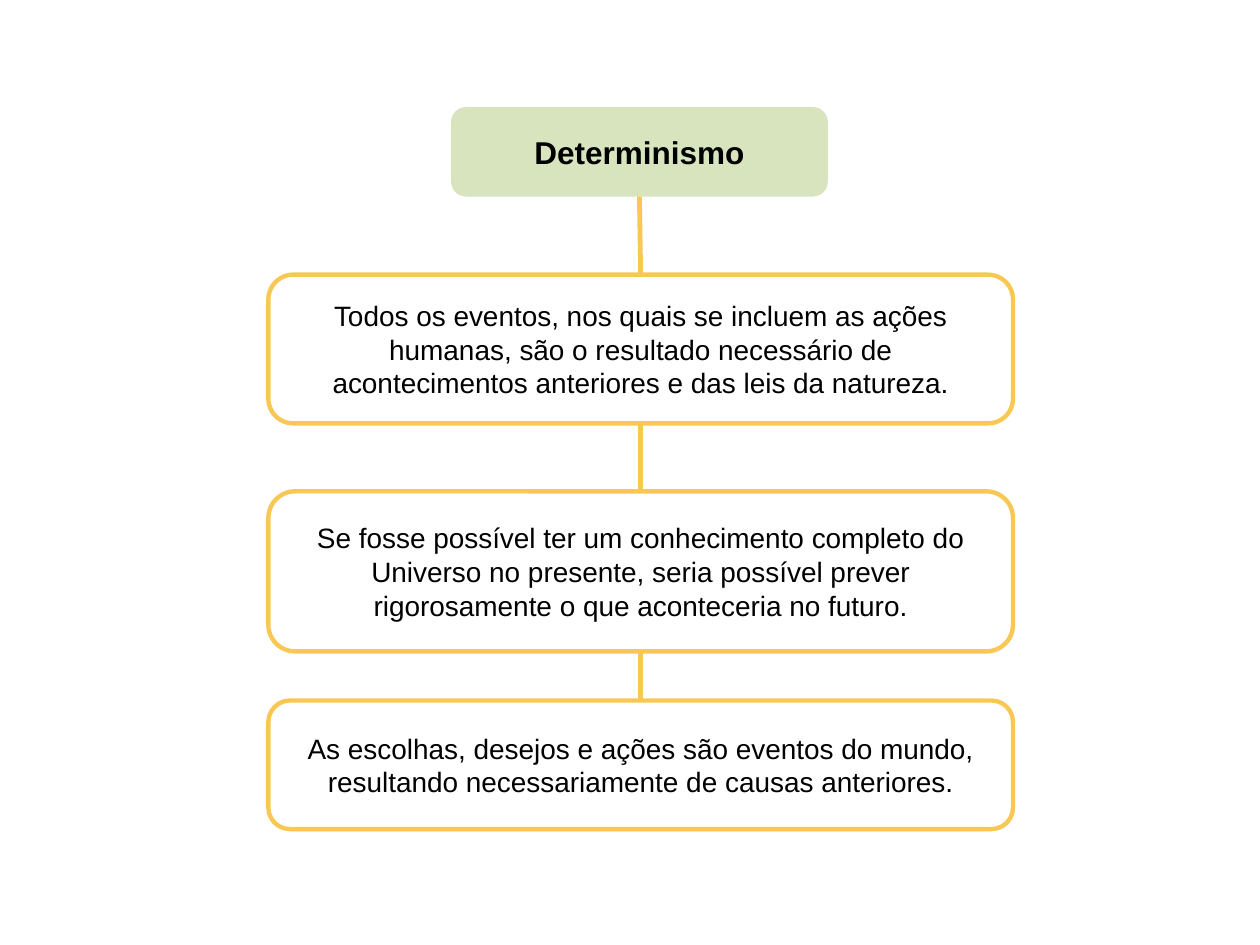
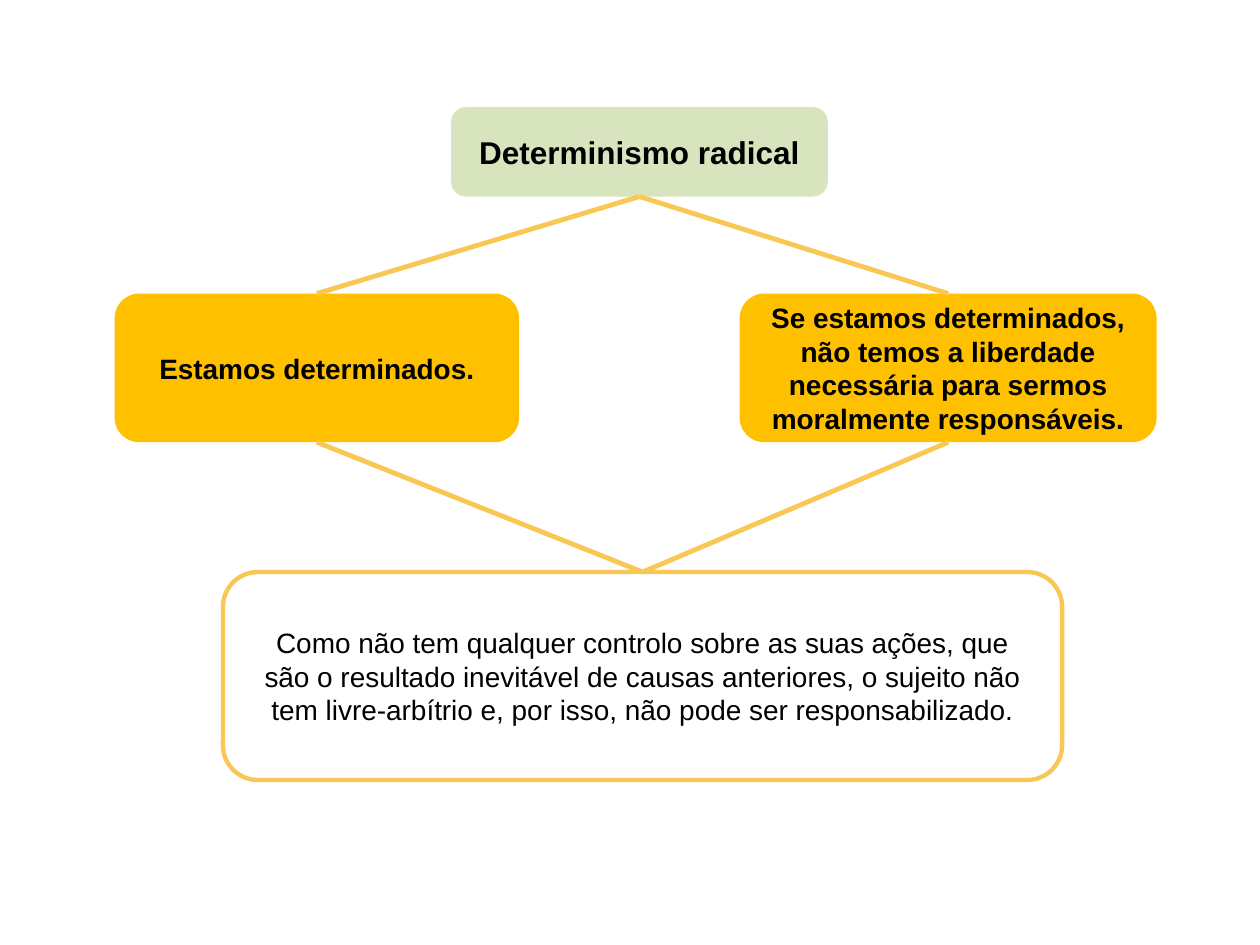
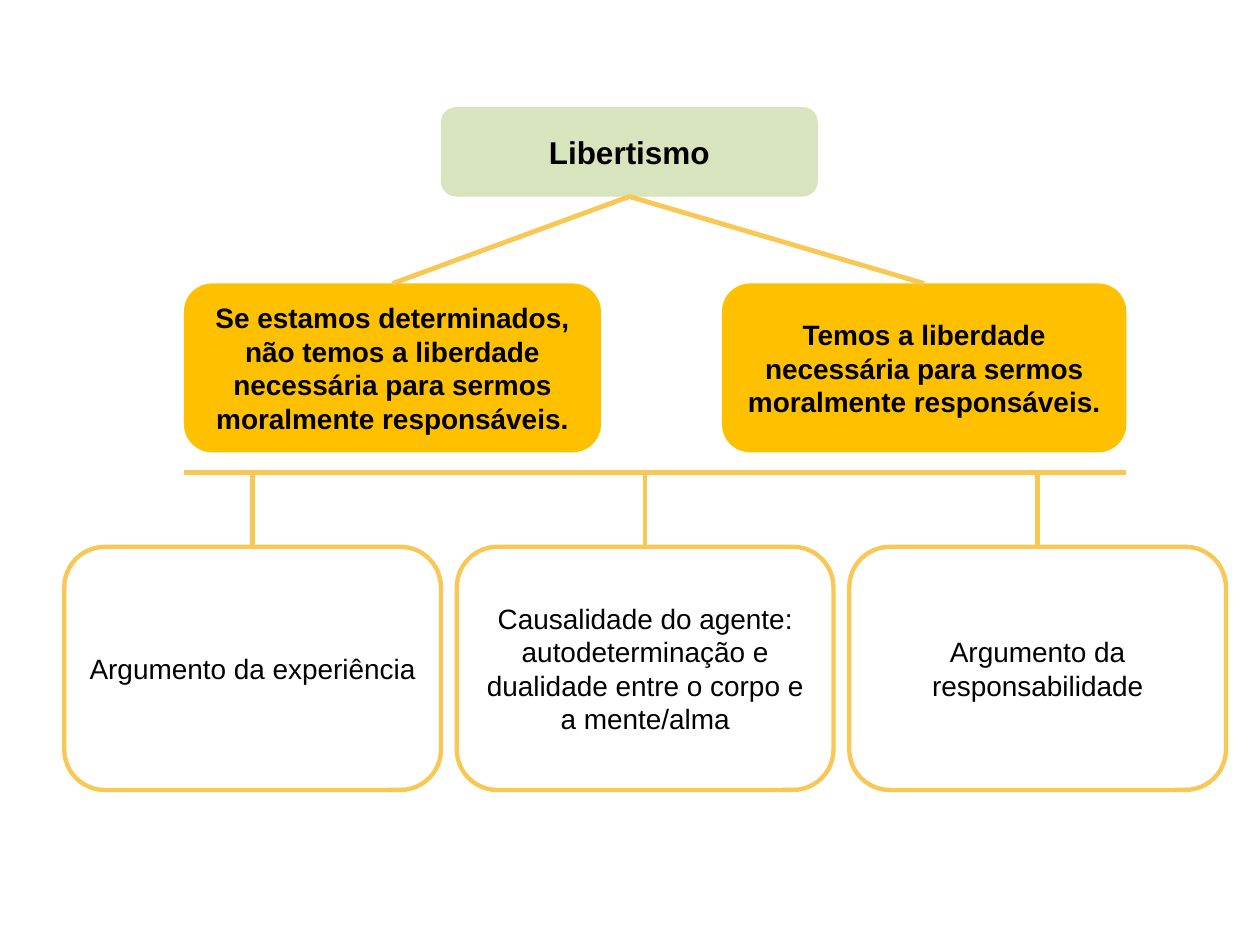
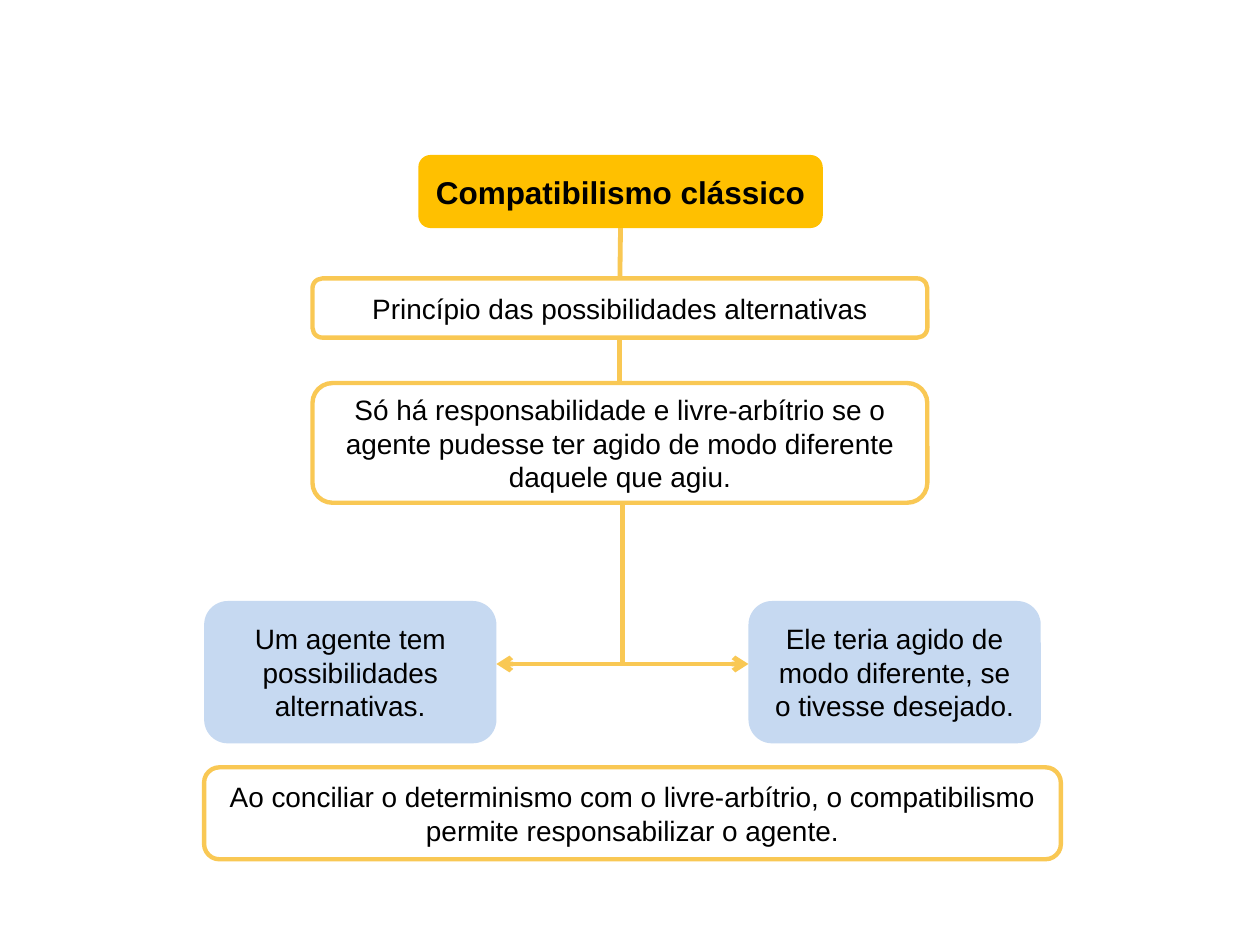
from pptx import Presentation
from pptx.dml.color import RGBColor
from pptx.enum.dml import MSO_LINE
from pptx.enum.shapes import MSO_CONNECTOR, MSO_SHAPE
from pptx.enum.text import MSO_ANCHOR, MSO_AUTO_SIZE, PP_ALIGN
from pptx.oxml.ns import qn
from pptx.util import Inches, Pt
from lxml.etree import SubElement

COLORS = {
    "text": "000000",
    "white": "FFFFFF",
    "green": "D7E4BD",
    "amber": "FFC000",
    "blue": "C6D9F1",
    "line": "F9C854",
}
FONT = "Arial"
SLIDE_WIDTH, SLIDE_HEIGHT = Inches(10), Inches(7.5)
COLUMN, ROW = SLIDE_WIDTH / 100, SLIDE_HEIGHT / 75
TITLE_LAYOUT = 5
TOPIC_AREA = (35.8, 8.5, 29.9, 7.1)
CONDITION = ("Se estamos determinados, não temos a liberdade "
             "necessária para sermos moralmente responsáveis.")


def color(name):
    return RGBColor.from_string(COLORS[name])


def across(columns):
    return round(columns * COLUMN)


def down(rows):
    return round(rows * ROW)


def write(shape, text, size=16, bold=False, margin=None):
    """Fill a shape with centred text, one paragraph per line of text."""
    frame = shape.text_frame
    frame.word_wrap = True
    frame.auto_size = MSO_AUTO_SIZE.NONE
    frame.vertical_anchor = MSO_ANCHOR.MIDDLE
    if margin is not None:
        frame.margin_left = frame.margin_right = margin
    frame.text = text
    for para in frame.paragraphs:
        para.alignment = PP_ALIGN.CENTER
        for span in para.runs:
            span.font.name = FONT
            span.font.size = Pt(size)
            span.font.bold = bold
            span.font.color.rgb = color("text")


def add_panel(page, area, fill, outlined=False):
    left, top, width, height = area
    panel = page.shapes.add_shape(MSO_SHAPE.ROUNDED_RECTANGLE, across(left),
                                  down(top), across(width), down(height))
    panel.shadow.inherit = False
    panel.fill.solid()
    panel.fill.fore_color.rgb = color(fill)
    if outlined:
        panel.line.color.rgb = color("line")
        panel.line.width = Pt(2.5)
    else:
        panel.line.fill.background()
    return panel


def add_outlined(page, area, text):
    write(add_panel(page, area, "white", outlined=True), text)


def add_filled(page, area, text, fill="amber", bold=True):
    write(add_panel(page, area, fill), text, bold=bold)


def add_topic(deck, text, area=TOPIC_AREA, fill="green"):
    """Start a slide whose title sits on a rounded panel."""
    page = deck.slides.add_slide(deck.slide_layouts[TITLE_LAYOUT])
    panel = add_panel(page, area, fill)
    title = page.shapes.title
    title.left, title.top = panel.left, panel.top
    title.width, title.height = panel.width, panel.height
    write(title, text, size=18, bold=True, margin=0)
    panel._element.addnext(title._element)
    return page


def add_line(page, start, end, arrow=False):
    line = page.shapes.add_connector(
        MSO_CONNECTOR.STRAIGHT, across(start[0]), down(start[1]),
        across(end[0]), down(end[1]))
    line.line.color.rgb = color("line")
    line.line.width = Pt(2.75)
    line.line.dash_style = MSO_LINE.SOLID
    if arrow:
        SubElement(line.line._get_or_add_ln(), qn("a:tailEnd"), type="arrow")
    SubElement(line._element.spPr, qn("a:effectLst"))


def top_of(area):
    left, top, width, _ = area
    return left + width / 2, top


def bottom_of(area):
    left, top, width, height = area
    return left + width / 2, top + height


def add_chain(page, first, steps):
    """Stack outlined boxes, each joined to the one above it."""
    above = first
    for area, text in steps:
        add_outlined(page, area, text)
        add_line(page, bottom_of(above), top_of(area))
        above = area


def build_determinism(deck):
    page = add_topic(deck, "Determinismo")
    left, width = 21.3, 59.1
    add_chain(page, TOPIC_AREA, [
        ((left, 21.8, width, 11.8),
         "Todos os eventos, nos quais se incluem as ações humanas, são o "
         "resultado necessário de acontecimentos anteriores e das leis da "
         "natureza."),
        ((left, 39, width, 12.7),
         "Se fosse possível ter um conhecimento completo do Universo no "
         "presente, seria possível prever rigorosamente o que aconteceria "
         "no futuro."),
        ((left, 55.6, width, 10.2),
         "As escolhas, desejos e ações são eventos do mundo, resultando "
         "necessariamente de causas anteriores."),
    ])


def build_hard_determinism(deck):
    page = add_topic(deck, "Determinismo radical")
    premises = [((9.1, 23.3, 32.1, 11.8), "Estamos determinados."),
                ((58.7, 23.3, 33.1, 11.8), CONDITION)]
    conclusion = (17.7, 45.4, 66.6, 16.5)
    add_outlined(page, conclusion,
                 "Como não tem qualquer controlo sobre as suas ações, que\n"
                 "são o resultado inevitável de causas anteriores, o sujeito "
                 "não tem livre-arbítrio e, por isso, não pode ser "
                 "responsabilizado.")
    for area, text in premises:
        add_filled(page, area, text)
        add_line(page, bottom_of(TOPIC_AREA), top_of(area))
        add_line(page, bottom_of(area), top_of(conclusion))


def build_libertarianism(deck):
    topic = (35, *TOPIC_AREA[1:])
    page = add_topic(deck, "Libertismo", topic)
    premises = [((14.6, 22.5, 33.1, 13.4), CONDITION),
                ((57.3, 22.5, 32.1, 13.4),
                 "Temos a liberdade necessária para sermos moralmente "
                 "responsáveis.")]
    for area, text in premises:
        add_filled(page, area, text)
        add_line(page, bottom_of(topic), top_of(area))

    bar_row = 37.5
    add_line(page, (14.6, bar_row), (89.4, bar_row))
    arguments = ["Argumento da experiência",
                 "Causalidade do agente: autodeterminação e dualidade entre "
                 "o corpo e a mente/alma",
                 "Argumento da responsabilidade"]
    for index, text in enumerate(arguments):
        area = (5.1 + index * 31.15, 43.4, 29.9, 19.3)
        add_outlined(page, area, text)
        middle, top = top_of(area)
        add_line(page, (middle, bar_row), (middle, top))


def build_compatibilism(deck):
    topic = (33.2, 12.3, 32.1, 5.8)
    principle = (24.8, 22.1, 48.8, 4.7)
    meaning = (24.8, 30.4, 48.8, 9.5)
    page = add_topic(deck, "Compatibilismo clássico", topic, "amber")
    add_chain(page, topic, [
        (principle, "Princípio das possibilidades alternativas"),
        (meaning, "Só há responsabilidade e livre-arbítrio se o agente "
                  "pudesse ter agido de modo diferente daquele que agiu."),
    ])
    add_filled(page, (16.2, 47.7, 23.2, 11.3),
               "Um agente tem possibilidades alternativas.", "blue", False)
    add_filled(page, (59.4, 47.7, 23.2, 11.3),
               "Ele teria agido de modo diferente, se o tivesse desejado.",
               "blue", False)
    add_outlined(page, (16.2, 60.9, 68, 7.3),
                 "Ao conciliar o determinismo com o livre-arbítrio, o "
                 "compatibilismo permite responsabilizar o agente.")

    fork_row = 52.7
    add_line(page, (49.4, 39.9), (49.4, fork_row))
    add_line(page, (43.4, fork_row), (39.4, fork_row), arrow=True)
    add_line(page, (54.7, fork_row), (59.4, fork_row), arrow=True)
    add_line(page, (43.4, fork_row), (56.3, fork_row))


def main():
    deck = Presentation()
    deck.slide_width, deck.slide_height = SLIDE_WIDTH, SLIDE_HEIGHT
    build_determinism(deck)
    build_hard_determinism(deck)
    build_libertarianism(deck)
    build_compatibilism(deck)
    deck.save("out.pptx")


if __name__ == "__main__":
    main()
